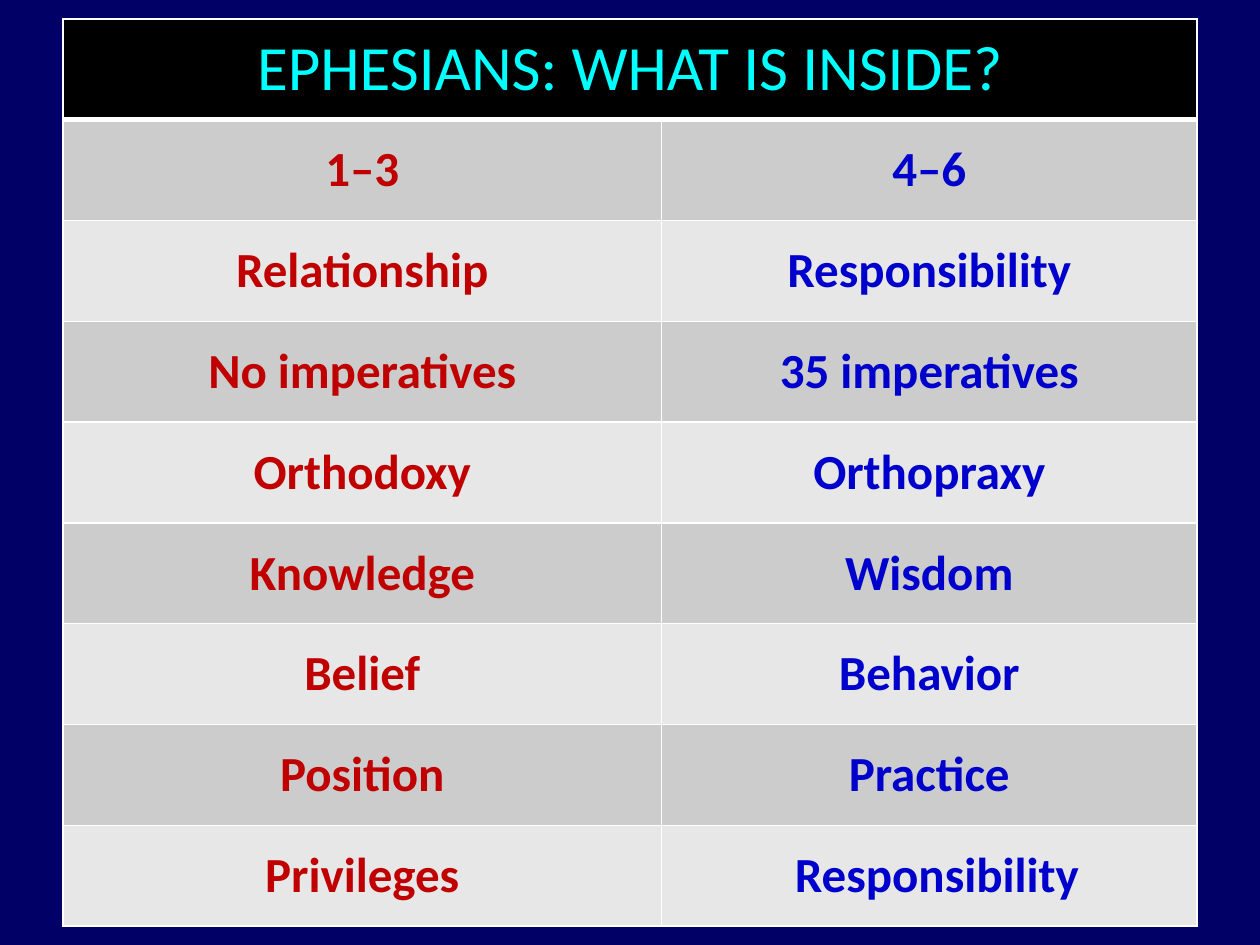
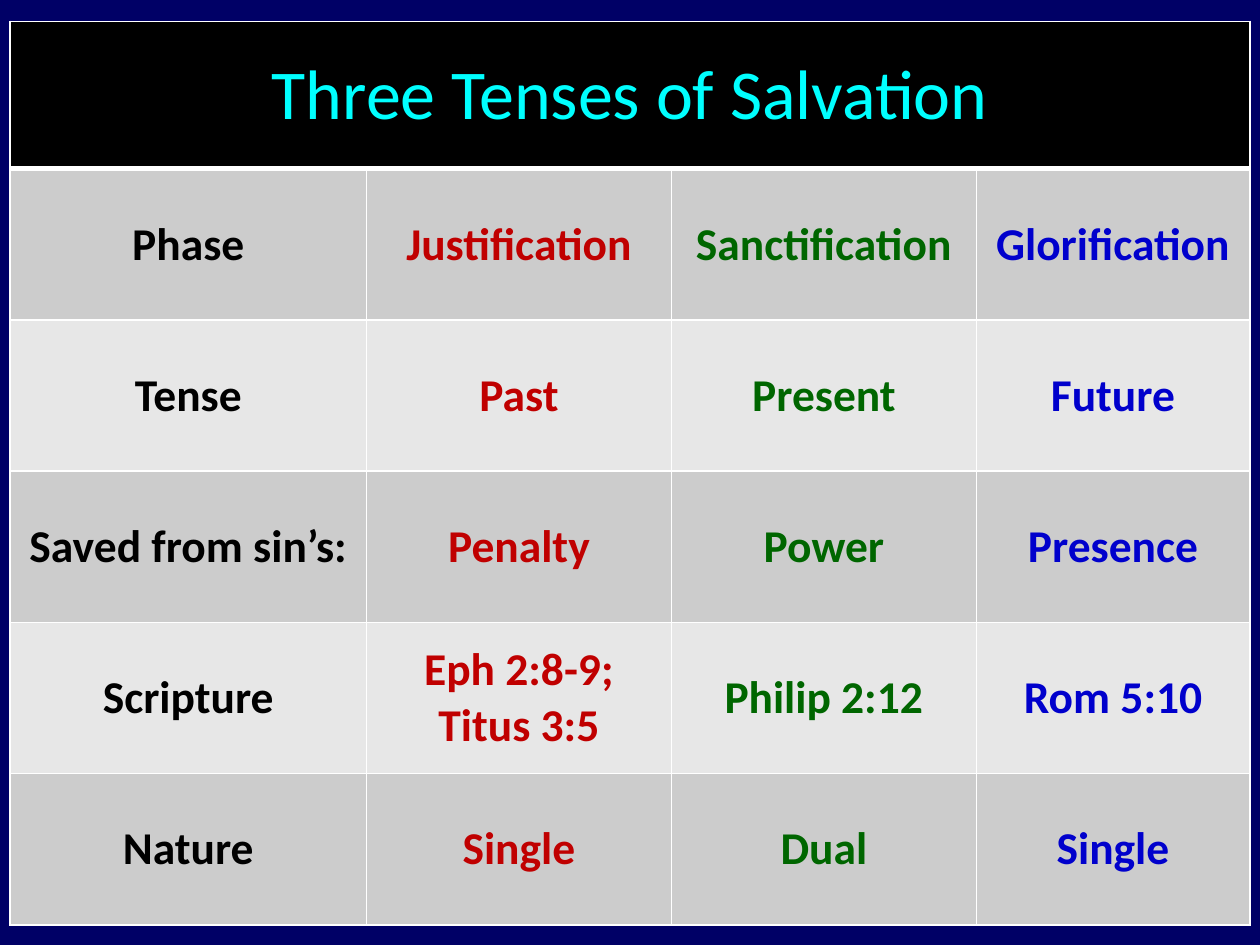
from dataclasses import dataclass

from lxml import etree
from pptx import Presentation
from pptx import util as u
from pptx.dml import color
from pptx.enum import text
from pptx.oxml import ns


@dataclass(frozen=True)
class Theme:
    font: str = "Calibri"
    background: str = "000066"
    header: str = "000000"
    title: str = "00FFFF"
    bands: tuple = ("CCCCCC", "E7E7E7")
    border: str = "FFFFFF"
    black: str = "000000"
    red: str = "C00000"
    green: str = "006600"
    blue: str = "0000CC"
    inside_title_size: int = 36
    inside_size: int = 28
    tenses_title_size: int = 40
    tenses_size: int = 26
    border_width: int = 1
    header_rule_width: int = 3


def rgb(value):
    return color.RGBColor.from_string(value)


def write_text(frame, content, *, font, size, ink, bold=False, indent=0):
    para = frame.paragraphs[0]
    para.alignment = text.PP_ALIGN.CENTER
    if indent:
        properties = para._p.get_or_add_pPr()
        properties.set("marL", str(u.Inches(indent)))
        properties.set("indent", "0")
    span = para.add_run()
    span.text = content
    span.font.name = font
    span.font.size = u.Pt(size)
    span.font.bold = bold
    span.font.color.rgb = rgb(ink)


class SlideWriter:
    def __init__(self, deck, theme):
        self.deck = deck
        self.theme = theme
        self.slide = None

    def new_slide(self):
        self.slide = self.deck.slides.add_slide(self.deck.slide_layouts[6])
        fill = self.slide.background.fill
        fill.solid()
        fill.fore_color.rgb = rgb(self.theme.background)

    def border(self, cell, bottom_width):
        properties = cell._tc.get_or_add_tcPr()
        for side in "LRTB":
            width = bottom_width if side == "B" else self.theme.border_width
            line = etree.SubElement(properties, ns.qn(f"a:ln{side}"), w=str(u.Pt(width)))
            fill = etree.SubElement(line, ns.qn("a:solidFill"))
            etree.SubElement(fill, ns.qn("a:srgbClr"), val=self.theme.border)

    def style_cell(self, cell, fill, bottom_width):
        self.border(cell, bottom_width)
        cell.fill.solid()
        cell.fill.fore_color.rgb = rgb(fill)
        cell.vertical_anchor = text.MSO_ANCHOR.MIDDLE

    def table(self, title, rows, *, left, top, widths, title_height, row_height,
              title_size, size, inks, indents=None):
        theme = self.theme
        indents = indents or {}
        height = title_height + row_height * len(rows)
        frame = self.slide.shapes.add_table(
            len(rows) + 1, len(widths), u.Inches(left), u.Inches(top),
            u.Inches(sum(widths)), u.Inches(height))
        table = frame.table
        for column, width in zip(table.columns, widths):
            column.width = u.Inches(width)
        for index, row in enumerate(table.rows):
            row.height = u.Inches(row_height if index else title_height)

        for cell in table.rows[0].cells:
            self.style_cell(cell, theme.header, theme.header_rule_width)
        heading = table.cell(0, 0)
        heading.merge(table.cell(0, len(widths) - 1))
        write_text(heading.text_frame, title, font=theme.font,
                   size=title_size, ink=theme.title)

        for index, row in enumerate(rows):
            for column, (content, ink) in enumerate(zip(row, inks)):
                cell = table.cell(index + 1, column)
                self.style_cell(cell, theme.bands[index % 2], theme.border_width)
                write_text(cell.text_frame, content, font=theme.font, size=size,
                           ink=ink, bold=True, indent=indents.get((index, column), 0))


INSIDE = [
    ("1–3", "4–6"),
    ("Relationship", "Responsibility"),
    ("No imperatives", "35 imperatives"),
    ("Orthodoxy", "Orthopraxy"),
    ("Knowledge", "Wisdom"),
    ("Belief", "Behavior"),
    ("Position", "Practice"),
    ("Privileges", "Responsibility"),
]

TENSES = [
    ("Phase", "Justification", "Sanctification", "Glorification"),
    ("Tense", "Past", "Present", "Future"),
    ("Saved from sin’s:", "Penalty", "Power", "Presence"),
    ("Scripture", "Eph 2:8-9; Titus 3:5", "Philip 2:12", "Rom 5:10"),
    ("Nature", "Single", "Dual", "Single"),
]


def main():
    deck = Presentation()
    deck.slide_width = u.Inches(10)
    deck.slide_height = u.Inches(7.5)
    theme = Theme()
    writer = SlideWriter(deck, theme)

    writer.new_slide()
    writer.table("EPHESIANS: WHAT IS INSIDE?", INSIDE, left=0.5, top=0.15,
                 widths=(4.75, 4.25), title_height=0.8, row_height=0.8,
                 title_size=theme.inside_title_size, size=theme.inside_size,
                 inks=(theme.red, theme.blue),
                 indents={(len(INSIDE) - 1, 1): 0.12})

    writer.new_slide()
    writer.table("Three Tenses of Salvation", TENSES, left=0.08, top=0.17,
                 widths=(2.83, 2.42, 2.42, 2.17), title_height=1.17, row_height=1.2,
                 title_size=theme.tenses_title_size, size=theme.tenses_size,
                 inks=(theme.black, theme.red, theme.green, theme.blue))

    deck.save("out.pptx")


if __name__ == "__main__":
    main()
